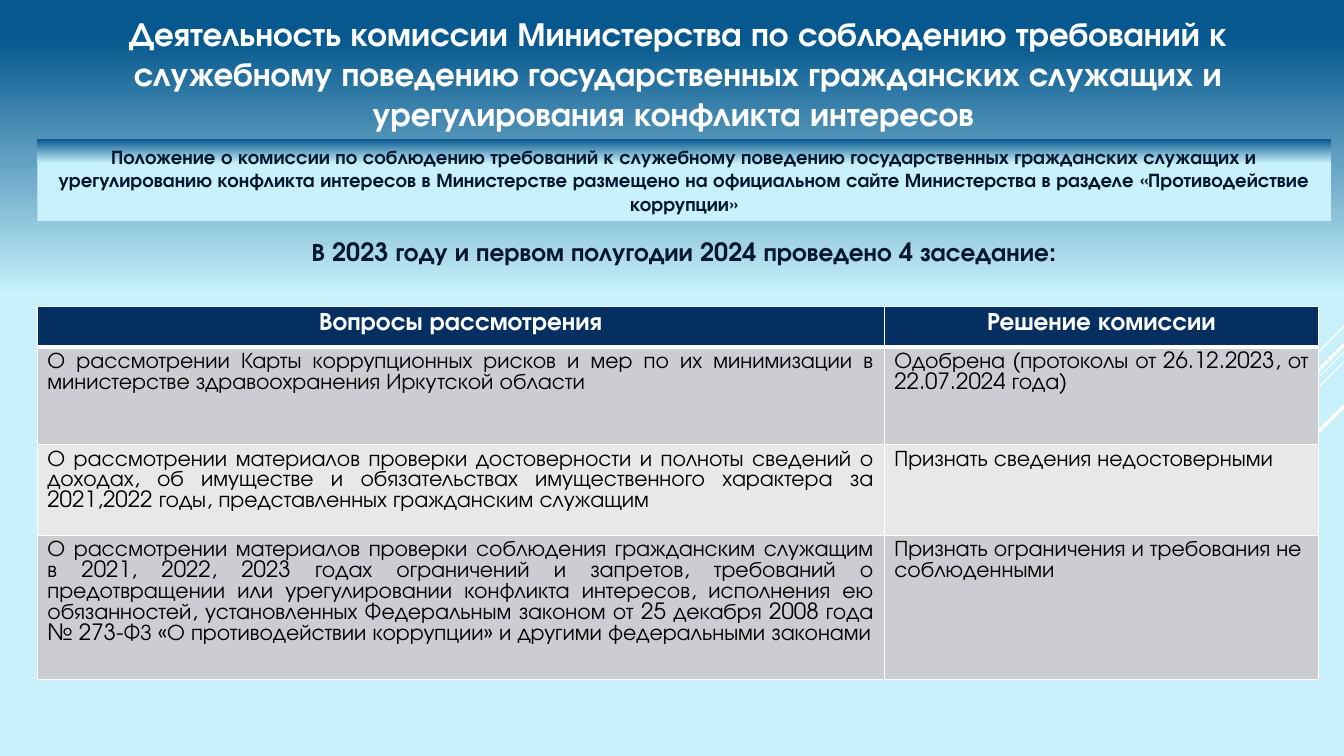
import pptx
import pptx.util
import pptx.oxml
import pptx.dml.color
import pptx.enum.text
import pptx.enum.shapes
import lxml.etree
from dataclasses import dataclass

Inches = pptx.util.Inches
Align = pptx.enum.text.PP_ALIGN
Anchor = pptx.enum.text.MSO_ANCHOR


@dataclass
class Theme:
    font: str = "TeX Gyre Adventor"
    white: str = "FFFFFF"
    black: str = "000000"
    ink: str = "031730"
    navy: str = "052F61"
    sky: str = "C8F1FB"
    sea: str = "06588E"
    bands: tuple = ("CCCDD2", "E7E8EA")
    head: int = 24
    lead: int = 18
    body: int = 16
    note: int = 14


theme = Theme()
rgb = pptx.dml.color.RGBColor.from_string
qn = pptx.oxml.ns.qn


def write(frame, text, size, color, bold=True, align=Align.CENTER):
    frame.word_wrap = True
    para = frame.paragraphs[0]
    para.alignment = align
    para.line_spacing = 1.0
    run = para.add_run()
    run.text = text
    look = {"name": theme.font, "size": pptx.util.Pt(size), "bold": bold}
    for name, value in look.items():
        setattr(run.font, name, value)
    run.font.color.rgb = rgb(color)


def blend(fill, start, end):
    fill.gradient()
    fill.gradient_angle = 90
    for stop, color, place in zip(fill.gradient_stops, (theme.sky, theme.sea), (start, end)):
        stop.color.rgb = rgb(color)
        stop.position = place


deck = pptx.Presentation()
deck.slide_width = Inches(13.33)
deck.slide_height = Inches(7.5)
slide = deck.slides.add_slide(deck.slide_layouts[5])
blend(slide.background.fill, 0.61, 0.95)

rays = [(3.24, 1, 0.75), (3.49, 3.26, 0.75), (3.59, 2.07, 0.75), (3.42, 1.91, 2.25), (4.03, 1.39, 2.25)]
for top, run, width in rays:
    ray = slide.shapes.add_connector(
        pptx.enum.shapes.MSO_CONNECTOR.STRAIGHT,
        Inches(13.33), Inches(top), Inches(13.33 - run), Inches(top + run))
    ray.line.color.rgb = rgb(theme.white)
    ray.line.width = pptx.util.Pt(width)
    lxml.etree.SubElement(ray.element.spPr, qn("a:effectLst"))

title = slide.shapes.title
place = {"left": 0.37, "top": 0.07, "width": 12.71, "height": 1.31}
for name, value in place.items():
    setattr(title, name, Inches(value))
title.text_frame.auto_size = pptx.enum.text.MSO_AUTO_SIZE.NONE
title.text_frame.vertical_anchor = Anchor.MIDDLE
write(title.text_frame,
      "Деятельность комиссии Министерства по соблюдению требований к служебному поведению "
      "государственных гражданских служащих и урегулирования конфликта интересов ",
      theme.head, theme.white)

panel = slide.shapes.add_shape(
    pptx.enum.shapes.MSO_SHAPE.RECTANGLE, Inches(0.37), Inches(1.38), Inches(12.83), Inches(0.81))
panel.shadow.inherit = False
panel.line.fill.background()
blend(panel.fill, 0.7, 1)
panel.text_frame.vertical_anchor = Anchor.MIDDLE
write(panel.text_frame,
      "Положение о комиссии по соблюдению требований к служебному поведению государственных "
      "гражданских служащих и урегулированию конфликта интересов в Министерстве размещено "
      "на официальном сайте Министерства в разделе «Противодействие коррупции»",
      theme.note, theme.ink)

lead = slide.shapes.add_textbox(Inches(2.7), Inches(2.3), Inches(8.17), Inches(0.4))
write(lead.text_frame, "В 2023 году и первом полугодии 2024 проведено 4 заседание:",
      theme.lead, theme.ink)

rows = [
    ("Вопросы рассмотрения", "Решение комиссии"),
    ("О рассмотрении Карты коррупционных рисков и мер по их минимизации в министерстве "
     "здравоохранения Иркутской области",
     "Одобрена (протоколы от 26.12.2023, от 22.07.2024 года)"),
    ("О рассмотрении материалов проверки достоверности и полноты сведений о доходах, об имуществе "
     "и обязательствах имущественного характера за 2021,2022 годы, представленных гражданским служащим",
     "Признать сведения недостоверными"),
    ("О рассмотрении материалов проверки соблюдения гражданским служащим в 2021, 2022, 2023 годах "
     "ограничений и запретов, требований о предотвращении или урегулировании конфликта интересов, "
     "исполнения ею обязанностей, установленных Федеральным законом от 25 декабря 2008 года "
     "№ 273-ФЗ «О противодействии коррупции» и другими федеральными законами",
     "Признать ограничения и требования не соблюденными"),
]
grid = slide.shapes.add_table(
    len(rows), 2, Inches(0.37), Inches(3.04), Inches(12.71), Inches(3.7)).table
for column, width in zip(grid.columns, (8.4, 4.31)):
    column.width = Inches(width)
for row, height in zip(grid.rows, (0.4, 0.97, 0.9, 1.43)):
    row.height = Inches(height)

for r, texts in enumerate(rows):
    for c, text in enumerate(texts):
        cell = grid.cell(r, c)
        props = cell._tc.get_or_add_tcPr()
        for side in "LRTB":
            thick = (r == 0 and side == "B") or (r == 1 and side == "T")
            edge = lxml.etree.SubElement(
                props, qn("a:ln" + side), w=str(pptx.util.Pt(3 if thick else 1)))
            paint = lxml.etree.SubElement(edge, qn("a:solidFill"))
            lxml.etree.SubElement(paint, qn("a:srgbClr"), val=theme.white)
        cell.fill.solid()
        if r == 0:
            cell.fill.fore_color.rgb = rgb(theme.navy)
            write(cell.text_frame, text, theme.lead, theme.white)
        else:
            cell.fill.fore_color.rgb = rgb(theme.bands[(r - 1) % 2])
            align = Align.LEFT if c == 1 and r > 1 else Align.JUSTIFY
            write(cell.text_frame, text, theme.body, theme.black, False, align)

deck.save("out.pptx")
